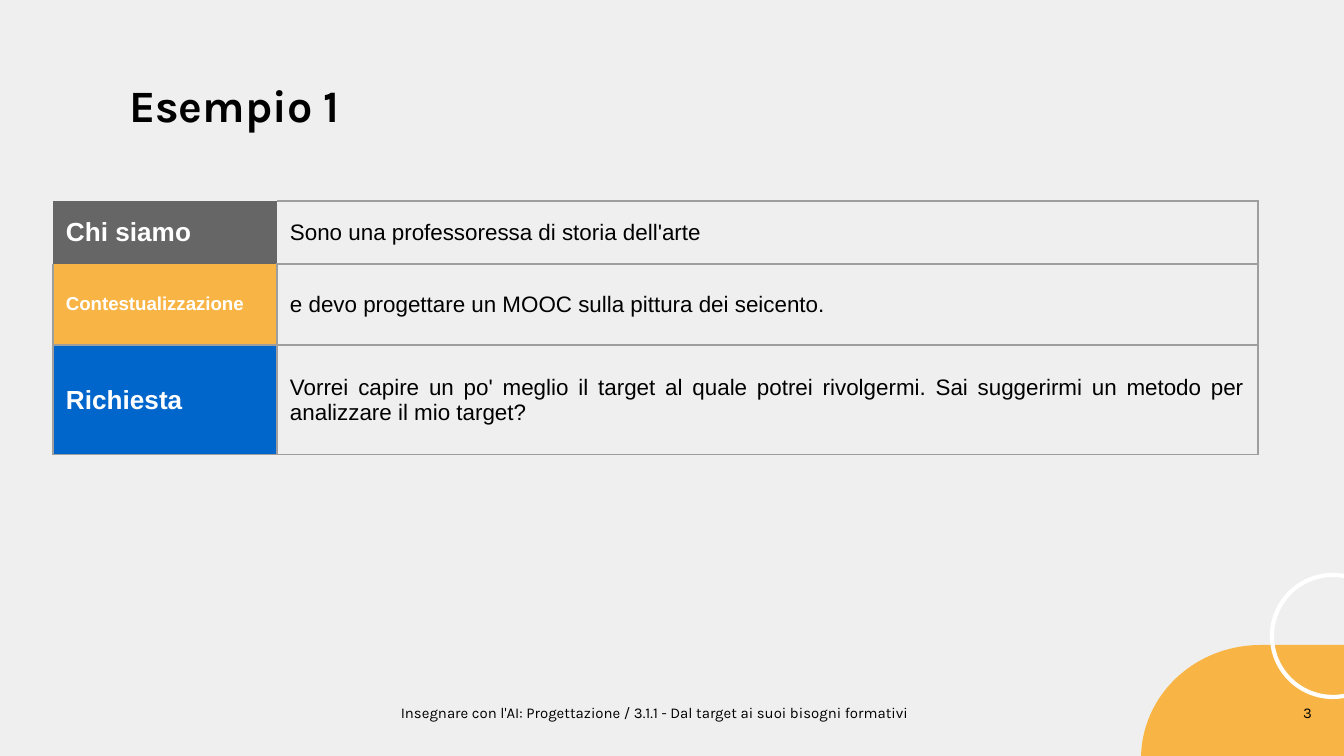
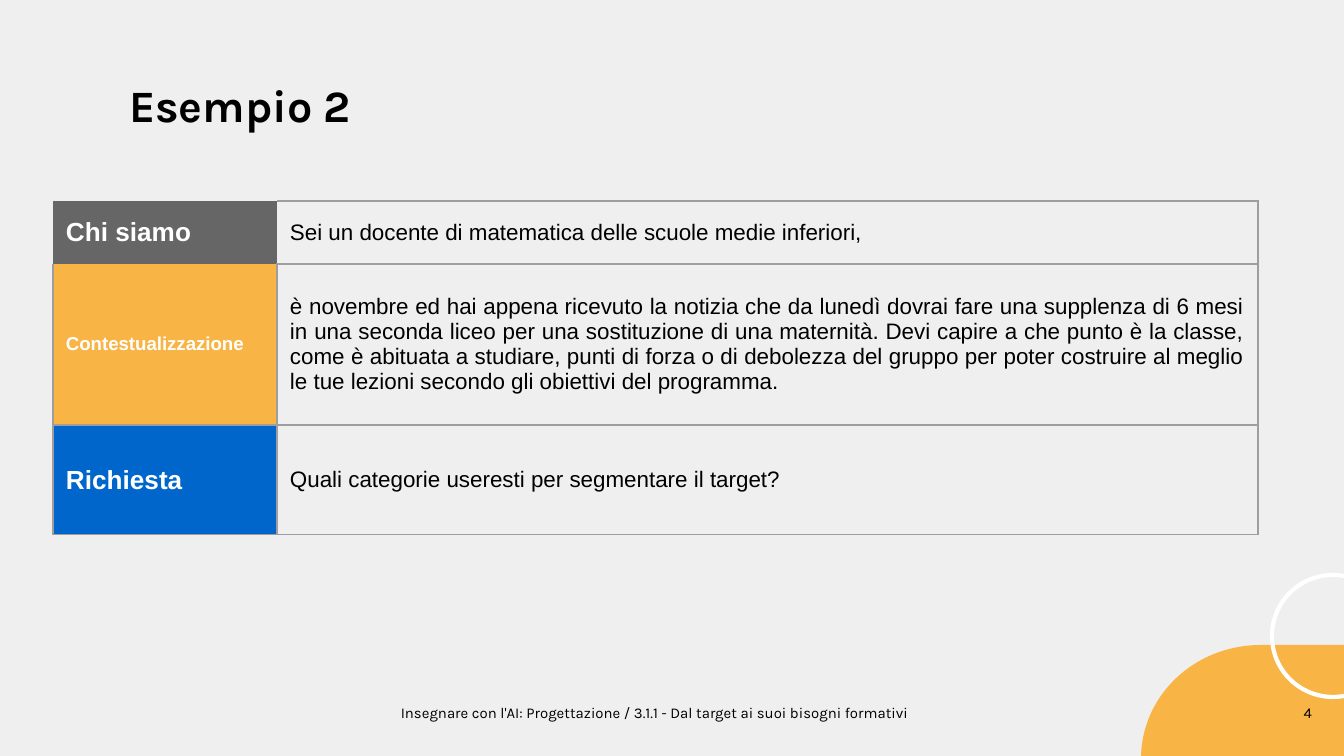
from dataclasses import dataclass

from lxml.etree import SubElement
from pptx import Presentation
from pptx.dml.color import RGBColor as Rgb
from pptx.enum.shapes import MSO_SHAPE as Shape
from pptx.enum.text import MSO_ANCHOR as Anchor, MSO_AUTO_SIZE as AutoSize, PP_ALIGN as Align
from pptx.oxml.ns import qn
from pptx.util import Pt

EMU_PER_PX = 914400 / 134.4


@dataclass(frozen=True)
class Theme:
    """Colours, fonts and type sizes of the deck."""
    paper: str = "EFEFEF"
    ink: str = "000000"
    white: str = "FFFFFF"
    grey: str = "666666"
    amber: str = "F8B546"
    blue: str = "0066CC"
    rule: str = "9E9E9E"
    display: str = "Karla"
    body: str = "Arial"
    title_size: int = 24
    label_size: int = 14
    small_label_size: int = 10
    prompt_size: int = 12
    footer_size: int = 8
    rule_width: float = 0.75
    ring_width: float = 2.25


THEME = Theme()
FOOTER = "Insegnare con l'AI: Progettazione / 3.1.1 - Dal target ai suoi bisogni formativi"
LABELS = [
    ("Chi siamo", THEME.grey, THEME.label_size),
    ("Contestualizzazione", THEME.amber, THEME.small_label_size),
    ("Richiesta", THEME.blue, THEME.label_size),
]
BORDERS = {(0, 0): "", (0, 1): "RTB", (1, 0): "LRB"}
EXAMPLES = [
    ("Esempio 1", 3, (63, 81, 110), (
        "Sono una professoressa di storia dell'arte",
        "e devo progettare un MOOC sulla pittura dei seicento.",
        "Vorrei capire un po' meglio il target al quale potrei rivolgermi. "
        "Sai suggerirmi un metodo per analizzare il mio target?",
    )),
    ("Esempio 2", 4, (63, 161, 110), (
        "Sei un docente di matematica delle scuole medie inferiori,",
        "è novembre ed hai appena ricevuto la notizia che da lunedì dovrai fare una "
        "supplenza di 6 mesi in una seconda liceo per una sostituzione di una maternità. "
        "Devi capire a che punto è la classe, come è abituata a studiare, punti di forza "
        "o di debolezza del gruppo per poter costruire al meglio le tue lezioni secondo "
        "gli obiettivi del programma.",
        "Quali categorie useresti per segmentare il target?",
    )),
]


def px(length):
    """Turn pixels into EMU."""
    return round(length * EMU_PER_PX)


def assign(target, **values):
    """Set each named value on the target."""
    for name, value in values.items():
        setattr(target, name, value)


def place(shape, left, top, width, height):
    """Move and size a shape in pixels."""
    assign(shape, left=px(left), top=px(top), width=px(width), height=px(height))


def inset(target, margin):
    """Give a frame or cell the same margin on every side."""
    assign(target, **{f"margin_{side}": px(margin) for side in ("left", "top", "right", "bottom")})


def write(frame, text, size, font, color=THEME.ink, bold=False, align=Align.LEFT, after=0):
    """Write one formatted paragraph into a text frame."""
    frame.text = text
    paragraph = frame.paragraphs[0]
    assign(paragraph, alignment=align, space_after=Pt(after))
    face = paragraph.runs[0].font
    assign(face, name=font, size=Pt(size), bold=bold)
    face.color.rgb = Rgb.from_string(color)


def add_title(slide, text):
    """Fill the title placeholder."""
    title = slide.shapes.title
    place(title, 116, 65, 667, 78)
    frame = title.text_frame
    inset(frame, 13)
    assign(frame, word_wrap=True, auto_size=AutoSize.NONE, vertical_anchor=Anchor.TOP)
    write(frame, text, THEME.title_size, THEME.display, bold=True)


def add_note(slide, text, box, align):
    """Add a small line of footer text."""
    frame = slide.shapes.add_textbox(*map(px, box)).text_frame
    inset(frame, 9)
    frame.word_wrap = True
    write(frame, text, THEME.footer_size, THEME.display, align=align)


def add_ornament(slide, preset, box, rotation, fill=None, line=None):
    """Add a filled or outlined corner ornament."""
    ornament = slide.shapes.add_shape(preset, *map(px, box))
    ornament.rotation = rotation
    ornament.shadow.inherit = False
    for paint, color in ((ornament.fill, fill), (ornament.line.fill, line)):
        if color:
            paint.solid()
            paint.fore_color.rgb = Rgb.from_string(color)
        else:
            paint.background()
    if line:
        ornament.line.width = Pt(THEME.ring_width)


def add_footer(slide, number):
    """Add the corner ornaments, course line and page number."""
    add_note(slide, FOOTER, (51, 695, 1208, 39), Align.CENTER)
    add_ornament(slide, Shape.FLOWCHART_DELAY, (1141, 645, 239, 227), 180, fill=THEME.amber)
    add_ornament(slide, Shape.OVAL, (1272, 575, 122, 122), 270, line=THEME.white)
    add_note(slide, str(number), (1239, 695, 82, 62), Align.RIGHT)


def draw_borders(cell, sides):
    """Rule the given sides of a cell and clear the others."""
    properties = cell._tc.get_or_add_tcPr()
    for side in "LRTB":
        edge = SubElement(properties, qn(f"a:ln{side}"), w=str(Pt(THEME.rule_width)))
        if side in sides:
            SubElement(SubElement(edge, qn("a:solidFill")), qn("a:srgbClr"), val=THEME.rule)
        else:
            SubElement(edge, qn("a:noFill"))


def format_cell(cell, sides, fill=None):
    """Set the margins, borders and fill of a cell."""
    inset(cell, 13)
    cell.vertical_anchor = Anchor.MIDDLE
    draw_borders(cell, sides)
    if fill:
        cell.fill.solid()
        cell.fill.fore_color.rgb = Rgb.from_string(fill)
    else:
        cell.fill.background()


def add_prompt_table(slide, heights, prompts):
    """Add the table that splits a prompt into its labelled parts."""
    widths = (224, 981)
    box = (53, 201, sum(widths), sum(heights))
    table = slide.shapes.add_table(len(LABELS), len(widths), *map(px, box)).table
    assign(table, first_row=False, horz_banding=False)
    for column, width in zip(table.columns, widths):
        column.width = px(width)
    for row, ((label, color, size), prompt, height) in enumerate(zip(LABELS, prompts, heights)):
        table.rows[row].height = px(height)
        for column, fill in enumerate((color, None)):
            format_cell(table.cell(row, column), BORDERS.get((row, column), "LRTB"), fill)
        write(table.cell(row, 0).text_frame, label, size, THEME.body, THEME.white, bold=True)
        write(table.cell(row, 1).text_frame, prompt, THEME.prompt_size, THEME.body,
              align=Align.JUSTIFY, after=12 if row else 0)


def main():
    """Build and save the deck."""
    deck = Presentation()
    assign(deck, slide_width=px(1344), slide_height=px(756))
    paper = deck.slide_master.background.fill
    paper.solid()
    paper.fore_color.rgb = Rgb.from_string(THEME.paper)
    for title, number, heights, prompts in EXAMPLES:
        slide = deck.slides.add_slide(deck.slide_layouts[5])
        add_footer(slide, number)
        add_prompt_table(slide, heights, prompts)
        add_title(slide, title)
    deck.save("out.pptx")


if __name__ == "__main__":
    main()
